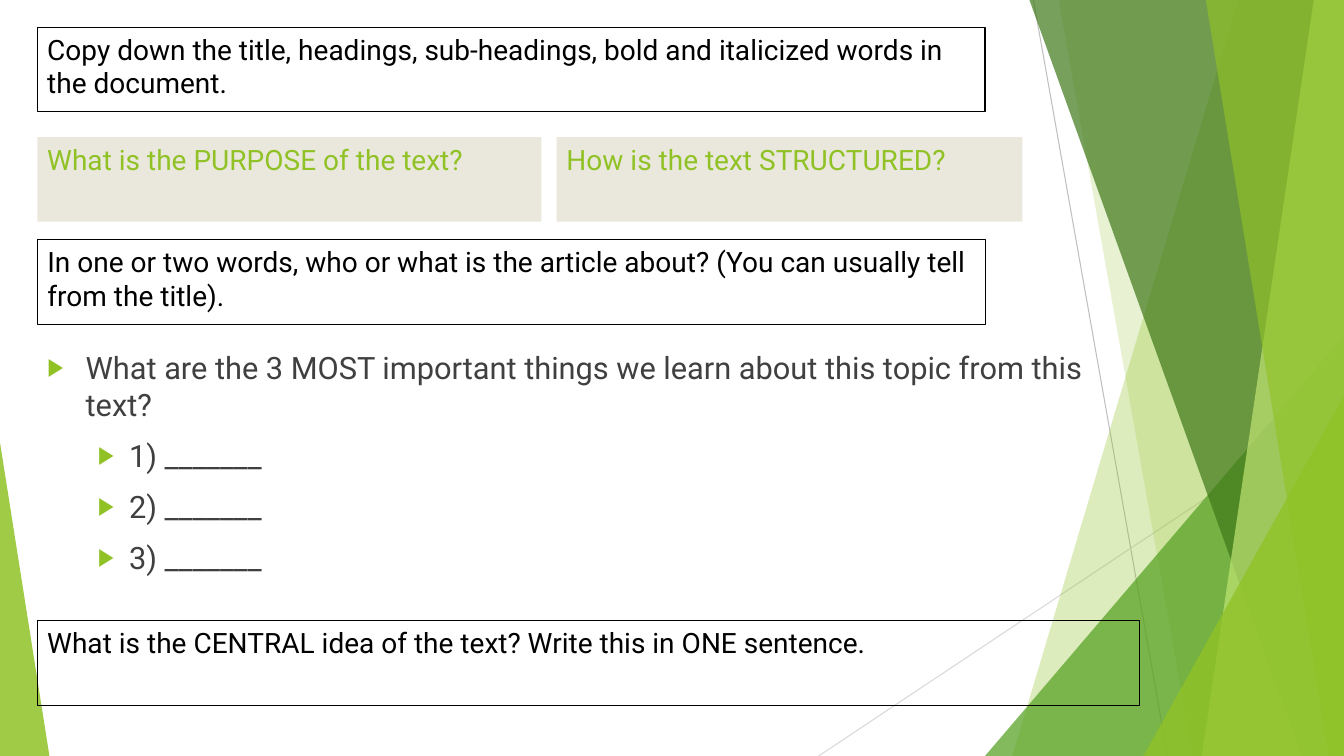
"""Build the reading-notes slide with its green faceted backdrop."""
from dataclasses import dataclass

from lxml import etree
from pptx import Presentation
from pptx.dml.color import RGBColor
from pptx.enum.shapes import MSO_CONNECTOR, MSO_SHAPE
from pptx.enum.text import MSO_ANCHOR, MSO_AUTO_SIZE, PP_ALIGN
from pptx.oxml.ns import qn
from pptx.util import Pt

PX = 9144
WIDTH, HEIGHT = 1333, 750
RECT = MSO_SHAPE.RECTANGLE
STRAIGHT = MSO_CONNECTOR.STRAIGHT
TOP = MSO_ANCHOR.TOP
LEFT = PP_ALIGN.LEFT
NO_FIT = MSO_AUTO_SIZE.NONE
FONT = "Roboto"
GREEN, BLACK, GREY, BEIGE = "90C226", "000000", "404040", "EAE8DC"


@dataclass
class Ray:
    start: tuple[int, int]
    end: tuple[int, int]
    color: str


@dataclass
class Facet:
    points: list[tuple[int, int]]
    color: str
    opacity: int


@dataclass
class Prompt:
    text: str
    left: int
    top: int
    width: int
    color: str = BLACK
    fill: str | None = None
    height: int = 84


def band(top_left: int, bottom_left: int) -> list[tuple[int, int]]:
    return [(top_left, 0), (WIDTH, 0), (WIDTH, HEIGHT), (bottom_left, HEIGHT)]


def wedge(edge: int, top: int, tip: int) -> list[tuple[int, int]]:
    return [(edge, top), (edge, HEIGHT), (tip, HEIGHT)]


RAYS = [
    Ray((1025, 0), (1158, HEIGHT), "BFBFBF"),
    Ray((WIDTH, 403), (812, HEIGHT), "D9D9D9"),
]
FACETS = [
    Facet(band(1228, 1004), GREEN, 30),
    Facet(band(1050, 1183), GREEN, 20),
    Facet(wedge(WIDTH, 333, 977), "54A021", 72),
    Facet(band(1021, 1291), "3F7819", 70),
    Facet(band(1303, 1192), "C0E474", 70),
    Facet(band(1196, 1318), GREEN, 65),
    Facet(wedge(WIDTH, 393, 1134), GREEN, 80),
    Facet(wedge(0, 439, 49), GREEN, 85),
]
TITLE = Prompt(
    "In one or two words, who or what is the article about? "
    "(You can usually tell from the title).", 37, 238, 940)
PROMPTS = [
    Prompt("What is the CENTRAL idea of the text? Write this in ONE sentence.",
           37, 616, 1093),
    Prompt("Copy down the title, headings, sub-headings, bold and italicized "
           "words in the document.", 37, 27, 940),
    Prompt("What is the PURPOSE of the text?", 37, 136, 500, GREEN, BEIGE),
    Prompt("How is the text STRUCTURED?", 552, 136, 462, GREEN, BEIGE),
]
QUESTION = "What are the 3 MOST important things we learn about this topic from this text?"
ANSWERS = [f"{n}) _______" for n in range(1, 4)]


def rgb(color: str) -> RGBColor:
    return RGBColor.from_string(color)


def place(sp, left: int, top: int, width: int, height: int) -> None:
    sp.left, sp.top, sp.width, sp.height = (v * PX for v in (left, top, width, height))


def write(p, text: str, *, size: int, color: str) -> None:
    p.alignment = LEFT
    r = p.add_run()
    r.text = text
    r.font.name = FONT
    r.font.size = Pt(size)
    r.font.color.rgb = rgb(color)


def prepare(tf) -> None:
    tf.word_wrap = True
    tf.auto_size = NO_FIT
    tf.vertical_anchor = TOP


def draw_ray(s, ray: Ray) -> None:
    ends = [v * PX for v in (*ray.start, *ray.end)]
    line = s.shapes.add_connector(STRAIGHT, *ends)
    line.line.color.rgb = rgb(ray.color)
    line.line.width = Pt(0.75)
    etree.SubElement(line.element.spPr, qn("a:effectLst"))


def draw_facet(s, facet: Facet) -> None:
    builder = s.shapes.build_freeform(*facet.points[0], scale=PX)
    builder.add_line_segments(facet.points[1:], close=True)
    sp = builder.convert_to_shape()
    sp.shadow.inherit = False
    sp.line.fill.background()
    sp.fill.solid()
    sp.fill.fore_color.rgb = rgb(facet.color)
    clr = sp.element.spPr.find(qn("a:solidFill"))[0]
    etree.SubElement(clr, qn("a:alpha"), val=str(facet.opacity * 1000))


def fill_prompt(sp, prompt: Prompt) -> None:
    place(sp, prompt.left, prompt.top, prompt.width, prompt.height)
    if prompt.fill:
        sp.fill.solid()
        sp.fill.fore_color.rgb = rgb(prompt.fill)
        sp.line.fill.background()
    else:
        sp.fill.background()
        sp.line.color.rgb = rgb(BLACK)
        sp.line.width = Pt(0.75)
    prepare(sp.text_frame)
    write(sp.text_frame.paragraphs[0], prompt.text, size=20, color=prompt.color)


def draw_prompt(s, prompt: Prompt) -> None:
    sp = s.shapes.add_shape(RECT, 0, 0, PX, PX)
    sp.shadow.inherit = False
    fill_prompt(sp, prompt)


def add_bullet(p, margin: int, hanging: int) -> None:
    pPr = p._p.get_or_add_pPr()
    pPr.set("marL", str(margin * PX))
    pPr.set("indent", str(-hanging * PX))
    clr = etree.SubElement(pPr, qn("a:buClr"))
    etree.SubElement(clr, qn("a:srgbClr"), val=GREEN)
    etree.SubElement(pPr, qn("a:buSzPct"), val="80000")
    etree.SubElement(pPr, qn("a:buChar"), char="▶")


def fill_list(sp) -> None:
    place(sp, 37, 341, 1071, 257)
    tf = sp.text_frame
    prepare(tf)
    for i, text in enumerate([QUESTION, *ANSWERS]):
        p = tf.add_paragraph() if i else tf.paragraphs[0]
        p.level = 1 if i else 0
        p.space_before = Pt(10)
        write(p, text, size=22, color=GREY)
        add_bullet(p, *((81, 31) if i else (38, 38)))


def main() -> None:
    prs = Presentation()
    prs.slide_width, prs.slide_height = WIDTH * PX, HEIGHT * PX
    s = prs.slides.add_slide(prs.slide_layouts[1])
    title, body = s.placeholders
    for ray in RAYS:
        draw_ray(s, ray)
    for facet in FACETS:
        draw_facet(s, facet)
    for sp in (title, body):
        s.shapes.element.append(sp.element)
    fill_prompt(title, TITLE)
    fill_list(body)
    for prompt in PROMPTS:
        draw_prompt(s, prompt)
    prs.save("out.pptx")


if __name__ == "__main__":
    main()
